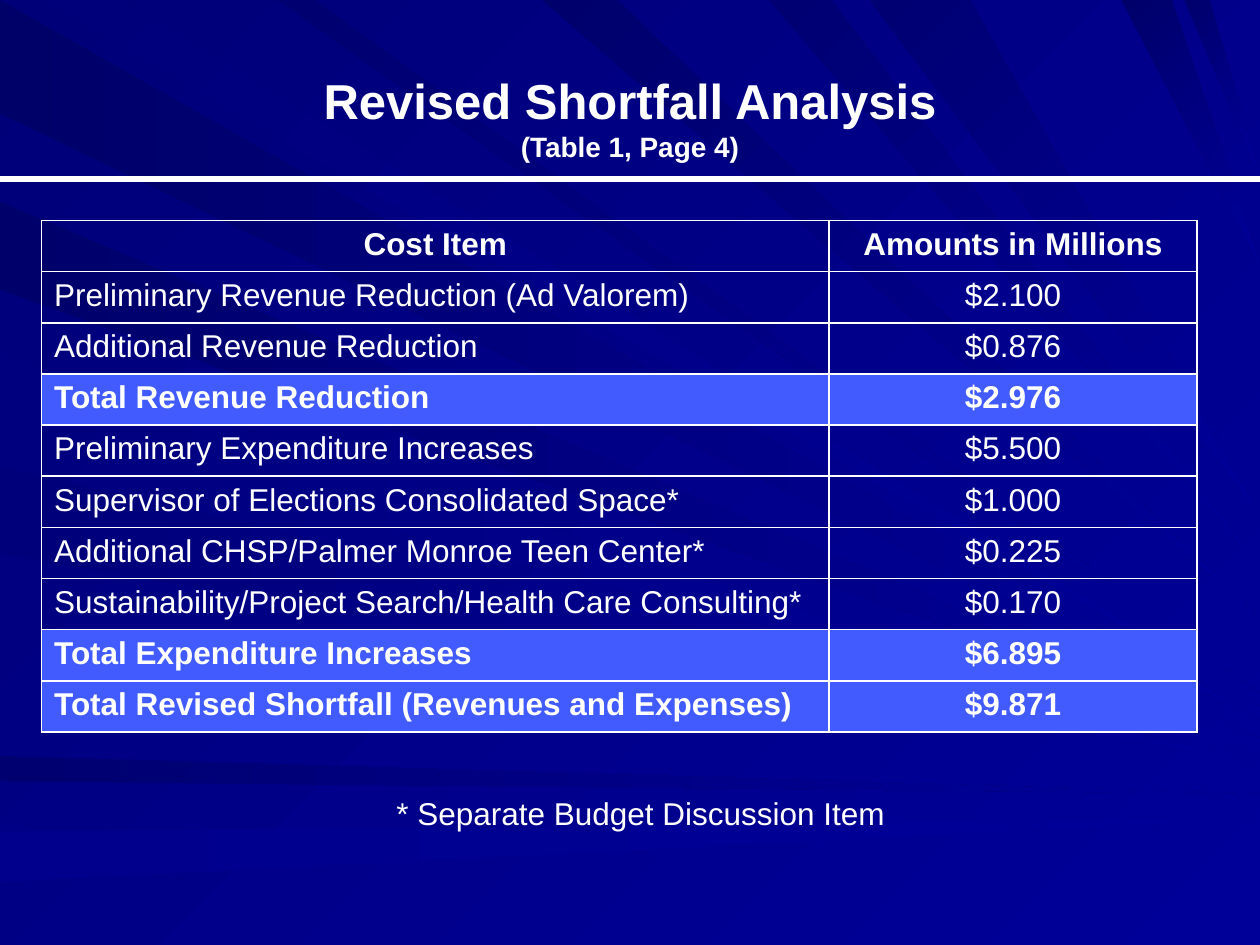
from copy import deepcopy

from lxml.etree import SubElement
from pptx import Presentation
from pptx.dml.color import RGBColor
from pptx.enum.text import MSO_ANCHOR, PP_ALIGN
from pptx.oxml.ns import qn
from pptx.util import Inches, Pt

WHITE = "FFFFFF"
HIGHLIGHT = "425BFF"

# Rays narrow to a tip on the right edge: start, end, height of tip, dark colour
LEFT_RAYS = [
    (0, 0.9, 5.7, "000069"),
    (1.6, 2.3, 5.85, "00006B"),
    (2.8, 3.4, 6, "00007E"),
    (3.7, 4.4, 6.05, "00007B"),
    (6, 6.2, 6.3, "000071"),
    (6.6, 7, 6.5, "00008C"),
]
TOP_RAYS = [
    (0.3, 1, 5.6, "00007B"),
    (2.2, 2.5, 5.5, "000070"),
    (4.3, 4.9, 4.9, "00006D"),
    (6.1, 6.6, 4.5, "000073"),
    (6.9, 7.7, 4.1, "000073"),
    (8.9, 9.3, 2.1, "00006B"),
    (9.4, 9.6, 1.4, "00006D"),
]

ROWS = [
    ("Cost Item", "Amounts in Millions"),
    ("Preliminary Revenue Reduction (Ad Valorem)", "$2.100"),
    ("Additional Revenue Reduction", "$0.876"),
    ("Total Revenue Reduction", "$2.976"),
    ("Preliminary Expenditure Increases", "$5.500"),
    ("Supervisor of Elections Consolidated Space*", "$1.000"),
    ("Additional CHSP/Palmer Monroe Teen Center*", "$0.225"),
    ("Sustainability/Project Search/Health Care Consulting*", "$0.170"),
    ("Total Expenditure Increases", "$6.895"),
    ("Total Revised Shortfall (Revenues and Expenses)", "$9.871"),
]


def rgb(color):
    return RGBColor.from_string(color)


def paint_gradient(fill, start, end, angle):
    """Fill with a gradient at a clockwise angle."""
    fill.gradient()
    fill.gradient_angle = 360 - angle
    for stop, color in zip(fill.gradient_stops, (start, end)):
        stop.color.rgb = rgb(color)


def write(p, text, size=18, bold=False, align=PP_ALIGN.CENTER):
    p.alignment = align
    r = p.add_run()
    r.text = text
    r.font.name = "Arial"
    r.font.size = Pt(size)
    r.font.bold = bold
    r.font.color.rgb = rgb(WHITE)
    return r


def add_ray(s, points, color, angle):
    points = [(Inches(x), Inches(y)) for x, y in points]
    builder = s.shapes.build_freeform(*points[0])
    builder.add_line_segments(points[1:], close=True)
    sp = builder.convert_to_shape()
    sp.shadow.inherit = False
    sp.line.fill.background()
    paint_gradient(sp.fill, color, "000099", angle)


def add_background(s):
    paint_gradient(s.background.fill, "000078", "000099", 45)
    for start, end, tip, color in LEFT_RAYS:
        add_ray(s, [(0, start), (10, tip), (0, end)], color, 0)
    for start, end, tip, color in TOP_RAYS:
        add_ray(s, [(start, 0), (10, tip), (end, 0)], color, 45)


def add_title(s, heading, subheading):
    title = s.shapes.title
    title.left, title.top = Inches(0.5), Inches(0.3)
    title.width, title.height = Inches(9), Inches(1.25)
    s.shapes._spTree.append(title._element)  # in front of the rays
    tf = title.text_frame
    tf.vertical_anchor = MSO_ANCHOR.MIDDLE
    p = tf.paragraphs[0]
    r = write(p, heading, size=28, bold=True)
    p.add_line_break()
    p._p[-1].append(deepcopy(r._r.rPr))  # the break keeps the heading size
    write(p, subheading, size=16, bold=True)


def add_borders(cell):
    tcPr = cell._tc.get_or_add_tcPr()
    for side in ("a:lnL", "a:lnR", "a:lnT", "a:lnB"):
        ln = SubElement(tcPr, qn(side), w=str(Pt(1)))
        SubElement(SubElement(ln, qn("a:solidFill")), qn("a:srgbClr"), val=WHITE)


def add_cost_table(s):
    table = s.shapes.add_table(len(ROWS), 2, Inches(0.33), Inches(1.75),
                               Inches(9.17), Inches(4.06)).table
    for column, width in zip(table.columns, (6.25, 2.92)):
        column.width = Inches(width)
    for i, row in enumerate(ROWS):
        total = row[0].startswith("Total")
        for j, text in enumerate(row):
            cell = table.cell(i, j)
            add_borders(cell)
            if total:
                cell.fill.solid()
                cell.fill.fore_color.rgb = rgb(HIGHLIGHT)
            else:
                cell.fill.background()
            align = PP_ALIGN.LEFT if i and not j else PP_ALIGN.CENTER
            write(cell.text_frame.paragraphs[0], text, bold=total or i == 0, align=align)


def add_rule(s, y):
    line = s.shapes.add_connector(1, 0, Inches(y), Inches(10), Inches(y))
    line.line.color.rgb = rgb(WHITE)
    line.line.width = Pt(3)
    SubElement(line._element.spPr, qn("a:effectLst"))


def add_footnote(s, text):
    tf = s.shapes.add_textbox(Inches(2.5), Inches(6.25), Inches(5.17), Inches(0.4)).text_frame
    tf.word_wrap = True
    write(tf.paragraphs[0], text)


def main():
    prs = Presentation()
    prs.slide_width, prs.slide_height = Inches(10), Inches(7.5)
    s = prs.slides.add_slide(prs.slide_layouts[5])

    # Background
    add_background(s)

    # Content
    add_title(s, "Revised Shortfall Analysis", "(Table 1, Page 4)")
    add_cost_table(s)
    add_rule(s, 1.42)
    add_footnote(s, "* Separate Budget Discussion Item")
    prs.save("out.pptx")


if __name__ == "__main__":
    main()
